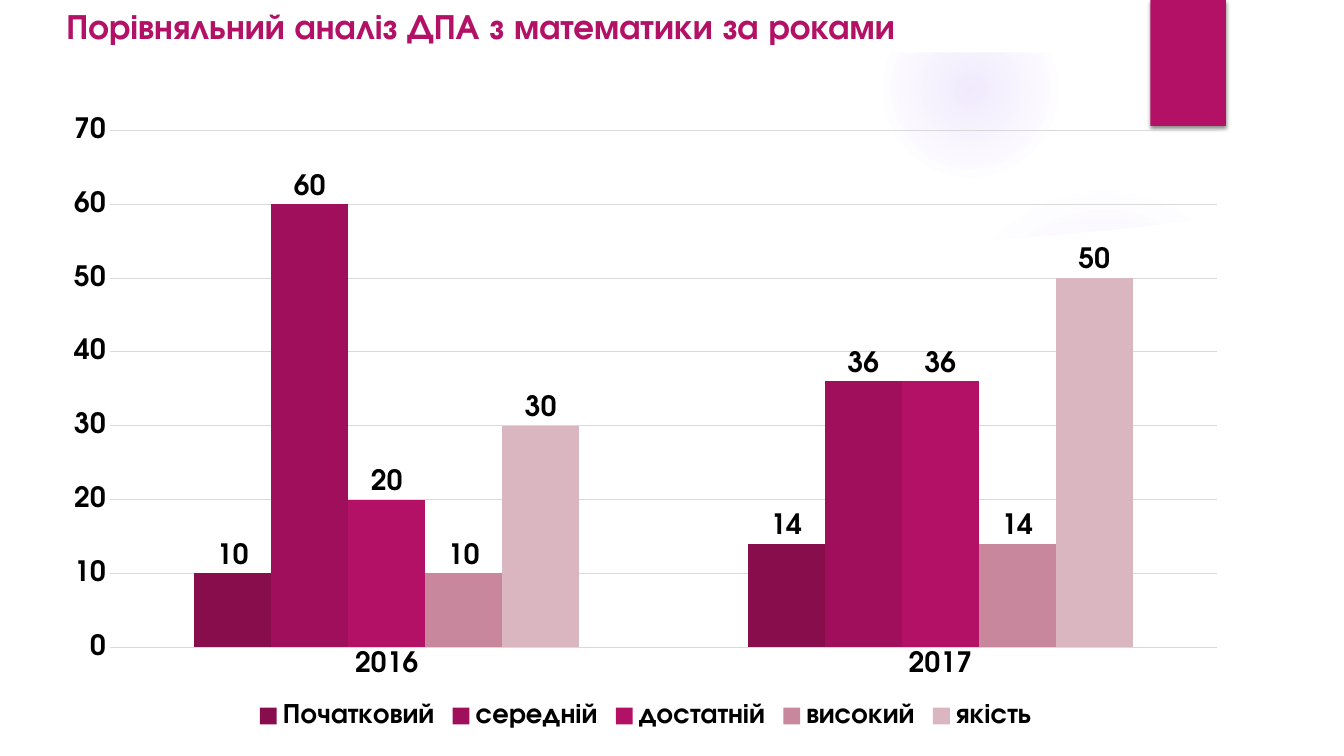
import pptx
import pptx.chart.data
import pptx.dml.color
import pptx.enum.chart
import pptx.enum.shapes
import pptx.enum.text
import pptx.oxml
import pptx.util
from pptx.util import Inches

FONT = "TeX Gyre Adventor"
ACCENT = "B31166"
GREY = "D9D9D9"
WHITE = "FFFFFF"
GLOW = "9B6BF2"
DRAWING_NS = 'xmlns:a="http://schemas.openxmlformats.org/drawingml/2006/main"'

YEARS = ["2016", "2017"]
LEVELS = [
    ("Початковий", (10, 14), "880D4D"),
    ("середній", (60, 36), "9F0F5B"),
    ("достатній", (20, 36), ACCENT),
    ("високий", (10, 14), "C8879C"),
    ("якість", (30, 50), "DAB6C1"),
]
# Outline of the white panel with its curved top edge, in inches
PANEL = [
    (0.5, 2.04), (0.5, 7), (12.84, 7), (12.84, 2.04), (12.28, 2.13),
    (11.72, 2.2), (11.16, 2.27), (10.6, 2.32), (10.04, 2.37), (9.49, 2.41),
    (8.4, 2.46), (7.08, 2.48), (5.59, 2.46), (4.01, 2.38), (1.87, 2.21),
]


def rgb(value):
    return pptx.dml.color.RGBColor.from_string(value)


def style_font(font, size, color):
    font.name = FONT
    font.size = pptx.util.Pt(size)
    font.bold = True
    font.color.rgb = rgb(color)


def paint(sp, color):
    sp.shadow.inherit = False
    sp.fill.solid()
    sp.fill.fore_color.rgb = rgb(color)
    sp.line.fill.background()


def add_block(slide, shape_type, left, top, width, height, color):
    sp = slide.shapes.add_shape(
        shape_type, Inches(left), Inches(top), Inches(width), Inches(height))
    paint(sp, color)
    return sp


def add_glow(slide, left, top, size, stops):
    """Circle that fades outwards; stops are (position %, opacity %)."""
    sp = add_block(slide, pptx.enum.shapes.MSO_SHAPE.OVAL,
                   left, top, size, size, GLOW)
    marks = "".join(
        f'<a:gs pos="{pos * 1000}"><a:srgbClr val="{GLOW}">'
        f'<a:alpha val="{alpha * 1000}"/></a:srgbClr></a:gs>'
        for pos, alpha in stops)
    grad = pptx.oxml.parse_xml(
        f'<a:gradFill {DRAWING_NS}><a:gsLst>{marks}</a:gsLst>'
        '<a:path path="circle"><a:fillToRect l="50000" t="50000" '
        'r="50000" b="50000"/></a:path></a:gradFill>')
    props = sp.element.spPr
    solid = props.find(pptx.oxml.ns.qn("a:solidFill"))
    props.replace(solid, grad)


def add_outline(slide, points, color):
    corners = [(Inches(x), Inches(y)) for x, y in points]
    builder = slide.shapes.build_freeform(*corners[0])
    builder.add_line_segments(corners[1:], close=True)
    paint(builder.convert_to_shape(), color)


def add_drop_shadow(sp):
    effects = sp.element.spPr.find(pptx.oxml.ns.qn("a:effectLst"))
    effects.append(pptx.oxml.parse_xml(
        f'<a:outerShdw {DRAWING_NS} blurRad="38100" dist="25400" '
        'dir="5400000" rotWithShape="0"><a:srgbClr val="000000">'
        '<a:alpha val="45000"/></a:srgbClr></a:outerShdw>'))


def add_title(slide, text):
    tf = slide.shapes.add_textbox(
        Inches(0.56), Inches(0), Inches(10.72), Inches(0.5)).text_frame
    tf.word_wrap = True
    tf.vertical_anchor = pptx.enum.text.MSO_ANCHOR.MIDDLE
    tf.text = text
    style_font(tf.paragraphs[0].runs[0].font, 25.2, ACCENT)


def style_line(line, color):
    line.color.rgb = rgb(color)
    line.width = pptx.util.Pt(0.75)


def add_results_chart(slide):
    data = pptx.chart.data.CategoryChartData()
    data.categories = YEARS
    for name, values, _ in LEVELS:
        data.add_series(name, values)
    chart = slide.shapes.add_chart(
        pptx.enum.chart.XL_CHART_TYPE.COLUMN_CLUSTERED,
        Inches(0.5), Inches(1.04), Inches(11.81), Inches(6.25), data).chart
    style_font(chart.font, 20, "000000")
    chart.has_title = False
    chart.has_legend = True
    chart.legend.position = pptx.enum.chart.XL_LEGEND_POSITION.BOTTOM
    chart.legend.include_in_layout = False

    # Axes
    no_ticks = pptx.enum.chart.XL_TICK_MARK.NONE
    for axis in (chart.category_axis, chart.value_axis):
        axis.major_tick_mark = no_ticks
        axis.minor_tick_mark = no_ticks
    style_line(chart.category_axis.format.line, GREY)
    values_axis = chart.value_axis
    values_axis.minimum_scale = 0
    values_axis.maximum_scale = 70
    values_axis.major_unit = 10
    values_axis.format.line.fill.background()
    style_line(values_axis.major_gridlines.format.line, GREY)

    # Columns and their values
    plot = chart.plots[0]
    plot.gap_width = 219
    plot.overlap = 0
    plot.vary_by_categories = False
    for series, (_, _, color) in zip(plot.series, LEVELS):
        series.format.fill.solid()
        series.format.fill.fore_color.rgb = rgb(color)
        labels = series.data_labels
        labels.show_value = True
        labels.position = pptx.enum.chart.XL_LABEL_POSITION.OUTSIDE_END
        style_font(labels.font, 20, "000000")


def main():
    prs = pptx.Presentation()
    prs.slide_width = Inches(13.33)
    prs.slide_height = Inches(7.5)
    slide = prs.slides.add_slide(prs.slide_layouts[6])
    rectangle = pptx.enum.shapes.MSO_SHAPE.RECTANGLE

    # Soft glows, partly covered by the panel and the title band
    add_glow(slide, 9.41, 1.83, 3.08, [(0, 7), (36, 6), (69, 0), (100, 0)])
    add_glow(slide, 8.75, 0.01, 1.75, [(0, 14), (36, 7), (73, 0), (100, 0)])
    add_outline(slide, PANEL, WHITE)
    add_block(slide, rectangle, 0, 0, 13.33, 0.52, WHITE)

    # Corner tab
    add_drop_shadow(add_block(slide, rectangle, 11.41, 0, 0.75, 1.25, ACCENT))

    add_title(slide, "Порівняльний аналіз ДПА з математики за роками")
    add_results_chart(slide)
    prs.save("out.pptx")


if __name__ == "__main__":
    main()
